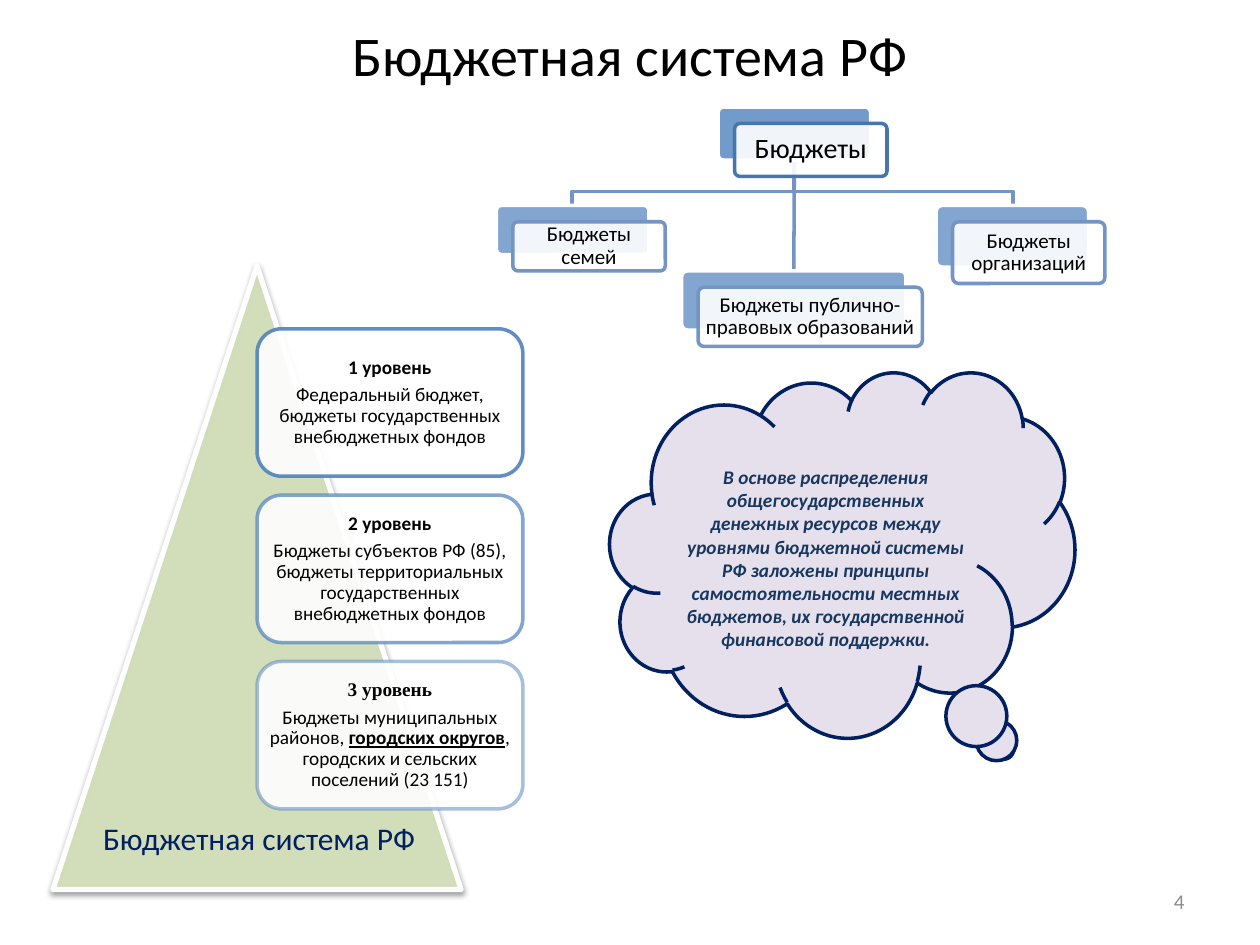
from lxml import etree
from pptx import Presentation
from pptx.dml.color import RGBColor
from pptx.enum.shapes import MSO_CONNECTOR as Connector, MSO_SHAPE as Shape
from pptx.enum.text import MSO_ANCHOR as Anchor, PP_ALIGN as Align
from pptx.oxml.ns import qn
from pptx.util import Inches, Pt

COLORS = {
    "black": "000000", "white": "FFFFFF", "blue": "4F81BD",
    "root_line": "4875AC", "branch": "7394C5", "green": "D7E4BD",
    "lilac": "E6E0EC", "navy": "002060", "cloud_text": "17375E", "grey": "8C8C8C",
}


class SlideBuilder:
    font = "Calibri"

    def __init__(self, slide):
        self.slide = slide
        self.shapes = slide.shapes

    def color(self, target, name, alpha=100):
        """Colour a solid fill or a line, with its opacity in percent."""
        fill = getattr(target, "fill", target)
        fill.solid()
        fill.fore_color.rgb = RGBColor.from_string(COLORS[name])
        if alpha < 100:
            clr = fill._xPr.find(qn("a:solidFill"))[0]
            etree.SubElement(clr, qn("a:alpha"), val=str(alpha * 1000))

    def outline(self, line, name, width=2, alpha=100):
        self.color(line, name, alpha)
        line.width = Pt(width)

    def shape(self, kind, box, fill, line, adj=(), width=2):
        """fill and line are (colour name, opacity) pairs."""
        s = self.shapes.add_shape(kind, *map(Inches, box))
        s.shadow.inherit = False
        for i, value in enumerate(adj):
            s.adjustments[i] = value
        self.color(s.fill, *fill)
        self.outline(s.line, line[0], width, line[1])
        return s

    def frame(self, s, anchor=Anchor.MIDDLE, inset=None, wrap=True):
        tf = s.text_frame
        tf.word_wrap = wrap
        tf.vertical_anchor = anchor
        if inset is not None:
            tf.margin_left = tf.margin_right = Inches(inset)
            tf.margin_top = tf.margin_bottom = Inches(inset)
        return tf

    def paragraph(self, p, text, size, color="black", align=Align.CENTER, spacing=None,
                  bold=None, italic=None, font=None):
        p.text = text
        p.alignment = align
        p.line_spacing = spacing
        f = p.font
        f.name, f.size, f.bold, f.italic = font or self.font, Pt(size), bold, italic
        f.color.rgb = RGBColor.from_string(COLORS[color])
        return p

    def title(self, text):
        s = self.shapes.title
        s.left, s.top, s.width, s.height = map(Inches, (0, 0, 10, 0.75))
        self.paragraph(self.frame(s, Anchor.BOTTOM).paragraphs[0], text, 32)

    def label(self, box, text, size, color, align, anchor=Anchor.TOP, wrap=True):
        s = self.shapes.add_textbox(*map(Inches, box))
        tf = self.frame(s, anchor, wrap=wrap)
        self.paragraph(tf.paragraphs[0], text, size, color, align)

    def branch(self, points):
        (x, y), *rest = [(Inches(x), Inches(y)) for x, y in points]
        builder = self.shapes.build_freeform(x, y)
        builder.add_line_segments(rest, close=False)
        s = builder.convert_to_shape()
        s.shadow.inherit = False
        s.fill.background()
        self.outline(s.line, "branch")

    def connector(self, start, end):
        s = self.shapes.add_connector(Connector.STRAIGHT, *map(Inches, (*start, *end)))
        etree.SubElement(s._element.spPr, qn("a:effectLst"))
        self.outline(s.line, "branch")
        return s

    def node(self, box, text, size=12, line="branch", alpha=70):
        """Tinted plate with a translucent captioned plate shifted over it."""
        x, y, w, h = box
        plate = self.shape(Shape.ROUNDED_RECTANGLE, box, ("blue", alpha),
                           ("white", 100), (0.1,))
        front = self.shape(Shape.ROUNDED_RECTANGLE, (x + 0.13, y + 0.13, w, h),
                           ("white", 90), (line, 100), (0.1,))
        p = self.frame(front, inset=0.04).paragraphs[0]
        self.paragraph(p, text, size, spacing=0.9)
        return plate

    def level(self, top, heading, parts, alpha, font=None):
        """Card whose every second text part is bold and underlined."""
        s = self.shape(Shape.ROUNDED_RECTANGLE, (2.04, top, 2.11, 1.17),
                       ("white", 90), ("blue", alpha))
        tf = self.frame(s, inset=0)
        p = self.paragraph(tf.paragraphs[0], heading, 11, spacing=0.9, bold=True, font=font)
        p.space_after = Pt(4)
        p = self.paragraph(tf.add_paragraph(), "", 11, spacing=0.9)
        for i, part in enumerate(parts):
            r = p.add_run()
            r.text = part
            if i % 2:
                r.font.bold = r.font.underline = True

    def pyramid(self, box):
        s = self.shape(Shape.ISOSCELES_TRIANGLE, box, ("green", 90), ("white", 100), width=3)
        effects = s._element.spPr.find(qn("a:effectLst"))
        shadow = etree.SubElement(effects, qn("a:outerShdw"), blurRad=str(Pt(3.1)),
                                  dist=str(Pt(1.6)), dir="5400000", rotWithShape="0")
        clr = etree.SubElement(shadow, qn("a:srgbClr"), val=COLORS["black"])
        etree.SubElement(clr, qn("a:alpha"), val="38000")

    def cloud(self, box, text):
        s = self.shape(Shape.CLOUD_CALLOUT, box, ("lilac", 100), ("navy", 100),
                       (0.347, 0.533))
        tf = self.frame(s)
        tf.margin_top = Inches(0.24)
        self.paragraph(tf.paragraphs[0], text, 11, "cloud_text", bold=True, italic=True)


def main():
    prs = Presentation()
    prs.slide_width, prs.slide_height = Inches(10), Inches(7.5)
    b = SlideBuilder(prs.slides.add_slide(prs.slide_layouts[5]))
    b.title("Бюджетная система РФ")

    root_x, root_y, bar_y, leaf_y = 6.3, 1.27, 1.52, 1.63
    for x in (4.54, 8.04):
        b.branch([(root_x, root_y), (root_x, bar_y), (x, bar_y), (x, leaf_y)])
    stem = b.connector((root_x, root_y), (root_x, 2.15))
    root = b.node((5.7, 0.85, 1.21, 0.42), "Бюджеты", 16, "root_line", 80)
    b.node((3.94, leaf_y, 1.21, 0.39), "Бюджеты семей")
    public = b.node((5.41, 2.15, 1.78, 0.47), "Бюджеты публично-правовых образований")
    b.node((7.43, leaf_y, 1.21, 0.49), "Бюджеты организаций")
    stem.begin_connect(root, 2)
    stem.end_connect(public, 0)

    b.pyramid((0.42, 2.11, 3.24, 4.95))
    levels = [
        ("1 уровень", ["Федеральный бюджет, бюджеты государственных внебюджетных фондов"],
         90, None),
        ("2 уровень", ["Бюджеты субъектов РФ (85), бюджеты территориальных "
                       "государственных внебюджетных фондов"], 70, None),
        ("3 уровень", ["Бюджеты муниципальных районов, ", "городских округов",
                       ", городских и сельских поселений (23 151)"], 50, "Times New Roman"),
    ]
    for i, level in enumerate(levels):
        b.level(2.61 + 1.32 * i, *level)
    b.label((0.72, 6.45, 2.7, 0.4), "Бюджетная система РФ", 18, "navy", Align.LEFT, wrap=False)

    b.cloud((4.84, 2.95, 3.69, 2.9),
            "В основе распределения общегосударственных денежных ресурсов между "
            "уровнями бюджетной системы РФ заложены принципы самостоятельности "
            "местных бюджетов, их государственной финансовой поддержки.")
    b.label((7.17, 6.95, 2.33, 0.4), "4", 12, "grey", Align.RIGHT, Anchor.MIDDLE)
    prs.save("out.pptx")


if __name__ == "__main__":
    main()
